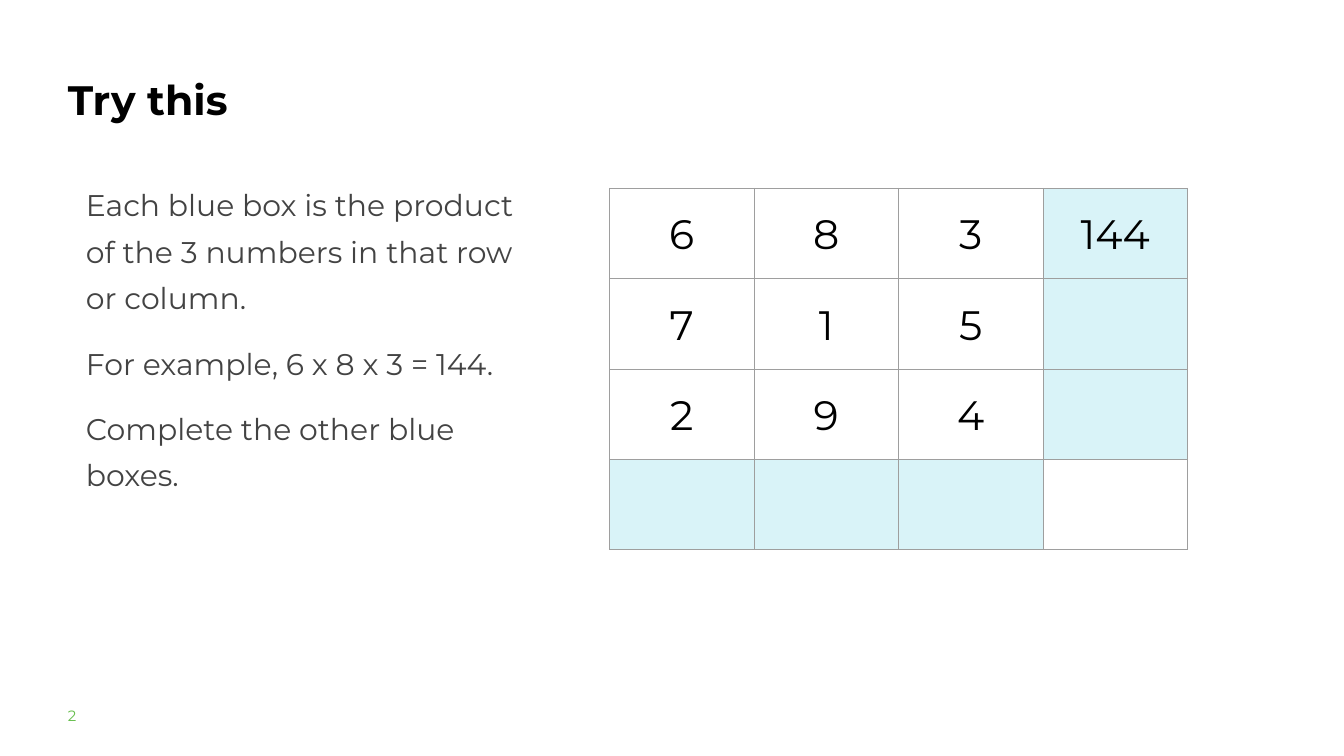
from pptx import Presentation
from pptx.util import Inches, Pt
from pptx.dml.color import RGBColor
from pptx.enum import text as t
from pptx.oxml import parse_xml
from pptx.oxml.ns import nsdecls

INK = {"black": "000000", "grey": "434343", "green": "65BE4B",
       "blue": "D9F3F8", "line": "9E9E9E"}
FONT = "Montserrat"


def style(para, size, ink, bold=False, lead=1.3):
    para.line_spacing = lead
    font = para.font
    font.name, font.size, font.bold = FONT, Pt(size), bold
    font.color.rgb = RGBColor.from_string(INK[ink])


def place(box, left, top, width, height):
    box.left, box.top = Inches(left), Inches(top)
    box.width, box.height = Inches(width), Inches(height)
    frame = box.text_frame
    frame.word_wrap = True
    frame.auto_size = t.MSO_AUTO_SIZE.NONE
    frame.vertical_anchor = t.MSO_ANCHOR.TOP
    return frame


prs = Presentation()
prs.slide_width, prs.slide_height = Inches(20), Inches(11.25)
slide = prs.slides.add_slide(prs.slide_layouts[5])

# Title
frame = place(slide.shapes.title, 0.91, 0.84, 3.96, 0.98)
frame.text = "Try this"
frame.paragraphs[0].alignment = t.PP_ALIGN.LEFT
style(frame.paragraphs[0], 44, "black", bold=True)

# Page number
frame = place(slide.shapes.add_textbox(0, 0, 0, 0), 0.91, 10.38, 0.89, 0.42)
frame.text = "2"
style(frame.paragraphs[0], 16, "green")

# Product grid: the last row and column are blue, save the corner
grid = [["6", "8", "3", "144"],
        ["7", "1", "5", ""],
        ["2", "9", "4", ""],
        ["", "", "", ""]]
last = len(grid) - 1
table = slide.shapes.add_table(4, 4, Inches(9.07), Inches(2.8),
                               Inches(8.6), Inches(5.38)).table
table.first_row = table.horz_banding = False
for r, row in enumerate(grid):
    for c, value in enumerate(row):
        cell = table.cell(r, c)
        cell.margin_left = cell.margin_right = Inches(0.07)
        cell.margin_top = cell.margin_bottom = 0
        cell.vertical_anchor = t.MSO_ANCHOR.MIDDLE
        cell.text = value
        para = cell.text_frame.paragraphs[0]
        para.alignment = t.PP_ALIGN.CENTER
        style(para, 44, "black", lead=1.07)
        for side in "LRTB":
            cell._tc.get_or_add_tcPr().append(parse_xml(
                f'<a:ln{side} {nsdecls("a")} w="{Pt(0.75)}"><a:solidFill>'
                f'<a:srgbClr val="{INK["line"]}"/></a:solidFill></a:ln{side}>'))
        if (r == last) != (c == last):
            cell.fill.solid()
            cell.fill.fore_color.rgb = RGBColor.from_string(INK["blue"])
        else:
            cell.fill.background()

# Instructions
frame = place(slide.shapes.add_textbox(0, 0, 0, 0), 1.18, 2.57, 6.68, 5.78)
frame.text = "\n".join(["Each blue box is the product of the 3 numbers in that row or column.",
                        "For example, 6 x 8 x 3 = 144.",
                        "Complete the other blue boxes."])
for i, para in enumerate(frame.paragraphs):
    style(para, 32, "grey")
    if i:
        para.space_before = Pt(20)

prs.save("out.pptx")
